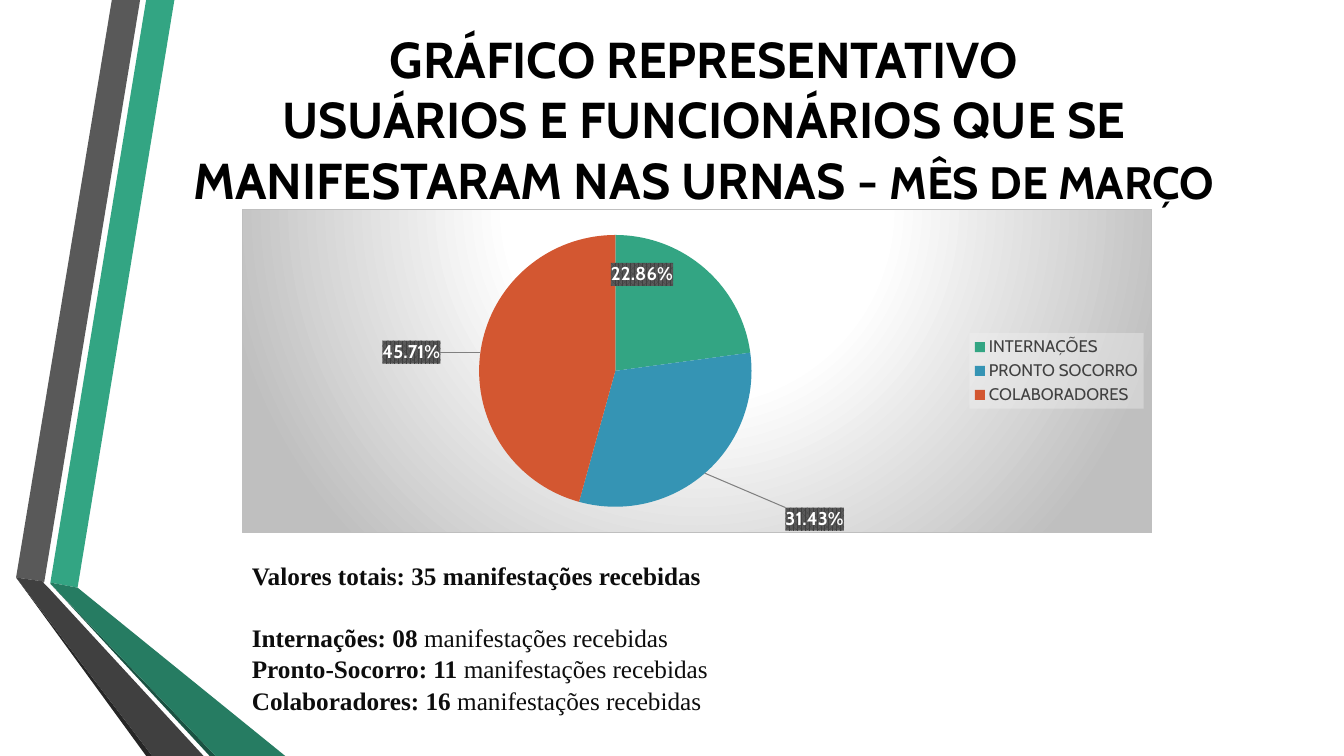
from lxml.etree import fromstring
from pptx import Presentation
from pptx.chart.data import CategoryChartData
from pptx.dml.color import RGBColor
from pptx.enum.chart import XL_CHART_TYPE, XL_LEGEND_POSITION
from pptx.enum.text import MSO_ANCHOR, MSO_AUTO_SIZE, PP_ALIGN
from pptx.oxml.ns import nsdecls, qn
from pptx.util import Inches, Pt

COLORS = {
    "green": "33A583", "green_dark": "267C62", "green_shadow": "1A5242",
    "gray": "595959", "gray_dark": "404040", "gray_shadow": "262626",
    "blue": "3594B4", "orange": "D35731", "silver": "BFBFBF", "leader": "808080",
    "pale": "F2F2F2", "white": "FFFFFF", "black": "000000", "ink": "0D0D0D",
}
RIBBONS = [
    ("green", [(0.5, 5.78), (0.77, 5.83), (1.73, 0), (1.45, 0)]),
    ("gray", [(1.39, 0), (1.11, 0), (0.16, 5.73), (0.44, 5.77)]),
    ("gray_shadow", [(0.16, 5.73), (1.45, 7.5), (1.51, 7.5)]),
    ("green_shadow", [(0.5, 5.79), (2.08, 7.5), (2.14, 7.5)]),
    ("green_dark", [(0.5, 5.79), (2.14, 7.5), (2.83, 7.5), (0.77, 5.83), (0.5, 5.78)]),
    ("gray_dark", [(2.02, 7.5), (0.48, 5.83), (0.43, 5.78), (0.44, 5.77),
                   (0.16, 5.73), (1.51, 7.5)]),
]
SHARES = [
    ("INTERNAÇÕES", 22.86, "green", (-0.02, -0.14)),
    ("PRONTO SOCORRO", 31.43, "blue", (0.17, 0.3)),
    ("COLABORADORES", 45.71, "orange", (-0.15, -0.03)),
]
TOTALS = [
    ("Valores totais: 35 manifestações recebidas", ""),
    ("Internações: 08 ", "manifestações recebidas"),
    ("Pronto-Socorro: 11 ", "manifestações recebidas"),
    ("Colaboradores: 16 ", "manifestações recebidas"),
]


def rgb(name):
    return RGBColor.from_string(COLORS[name])


def style_font(font, family, size, color, bold=False):
    font.name, font.size, font.bold = family, Pt(size), bold
    font.color.rgb = rgb(color)


def write(paragraph, text, **style):
    run = paragraph.add_run()
    run.text = text
    style_font(run.font, **style)


def xml(tag, content):
    return fromstring(f'<{tag} {nsdecls("c", "a")}>{content}</{tag}>')


def solid(name, extra=""):
    return f'<a:solidFill><a:srgbClr val="{COLORS[name]}">{extra}</a:srgbClr></a:solidFill>'


def manual_layout(target="", **values):
    items = "".join(f'<c:{key} val="{value}"/>' for key, value in values.items())
    return f"<c:manualLayout>{target}{items}</c:manualLayout>"


def label_xml():
    look = (
        '<c:numFmt formatCode="0.00%" sourceLinked="0"/>'
        '<c:spPr><a:pattFill prst="pct75">'
        f'<a:fgClr><a:srgbClr val="{COLORS["gray_dark"]}"/></a:fgClr>'
        f'<a:bgClr><a:srgbClr val="{COLORS["gray"]}"/></a:bgClr>'
        '</a:pattFill><a:ln><a:noFill/></a:ln></c:spPr>'
        '<c:txPr><a:bodyPr/><a:p><a:pPr><a:defRPr sz="1330" b="1">'
        f'{solid("white")}<a:latin typeface="Cabin"/></a:defRPr></a:pPr></a:p></c:txPr>'
        '<c:dLblPos val="ctr"/><c:showLegendKey val="0"/><c:showVal val="0"/>'
        '<c:showCatName val="0"/><c:showSerName val="0"/><c:showPercent val="1"/>'
        '<c:showBubbleSize val="0"/>'
    )
    points = "".join(
        f'<c:dLbl><c:idx val="{index}"/><c:layout>{manual_layout(x=x, y=y)}</c:layout>'
        f"{look}</c:dLbl>"
        for index, (_, _, _, (x, y)) in enumerate(SHARES)
    )
    leader = (f'<c:showLeaderLines val="1"/><c:leaderLines><c:spPr><a:ln w="9525">'
              f'{solid("leader")}</a:ln></c:spPr></c:leaderLines>')
    return xml("c:dLbls", points + look + leader)


class SlideBuilder:
    def __init__(self, presentation):
        self.slide = presentation.slides.add_slide(presentation.slide_layouts[5])
        self.shapes = self.slide.shapes
        self.heading = {"family": "Cabin", "color": "black", "bold": True}
        self.body = {"family": "Times New Roman", "size": 18, "color": "ink"}

    def background(self, color):
        self.slide.background.fill.solid()
        self.slide.background.fill.fore_color.rgb = rgb(color)

    def ribbon(self, color, points):
        corners = [(Inches(x), Inches(y)) for x, y in points]
        builder = self.shapes.build_freeform(*corners[0])
        builder.add_line_segments(corners[1:], close=True)
        shape = builder.convert_to_shape()
        shape.shadow.inherit = False
        shape.fill.solid()
        shape.fill.fore_color.rgb = rgb(color)
        shape.line.fill.background()

    def title(self, lines, ending, box):
        title = self.shapes.title
        title.left, title.top, title.width, title.height = map(Inches, box)
        frame = title.text_frame
        frame.word_wrap, frame.auto_size = True, MSO_AUTO_SIZE.NONE
        frame.vertical_anchor = MSO_ANCHOR.MIDDLE
        paragraph = frame.paragraphs[0]
        paragraph.alignment = PP_ALIGN.CENTER
        write(paragraph, lines[0], size=36, **self.heading)
        paragraph.add_line_break()
        write(paragraph, lines[1], size=36, **self.heading)
        write(paragraph, ending, size=32.4, **self.heading)

    def pie(self, shares, box):
        data = CategoryChartData()
        data.categories = [share[0] for share in shares]
        data.add_series("Series 1", [share[1] for share in shares])
        chart = self.shapes.add_chart(XL_CHART_TYPE.PIE, *map(Inches, box), data).chart
        chart.has_title = False
        style_font(chart.font, "Cabin", 10, "black")
        plot = chart.plots[0]
        plot.vary_by_categories = True
        for index, (_, _, color, _) in enumerate(shares):
            point = plot.series[0].points[index]
            point.format.fill.solid()
            point.format.fill.fore_color.rgb = rgb(color)
            point.format.line.fill.background()
        chart.has_legend = True
        chart.legend.position = XL_LEGEND_POSITION.RIGHT
        chart.legend.include_in_layout = False
        style_font(chart.legend.font, "Cabin", 12, "gray_dark")
        self.finish_pie(chart.element)

    def finish_pie(self, root):
        next(root.iter(qn("c:cat"))).addprevious(label_xml())
        legend = next(root.iter(qn("c:legend")))
        legend.find(qn("c:txPr")).addprevious(
            xml("c:spPr", solid("pale", '<a:alpha val="39000"/>')))
        area = next(root.iter(qn("c:plotArea")))
        for layout in area.findall(qn("c:layout")):
            area.remove(layout)
        area.insert(0, xml("c:layout", manual_layout(
            '<c:layoutTarget val="inner"/>', xMode="edge", yMode="edge",
            x=0.26, y=0.08, w=0.3, h=0.84)))
        stops = "".join(
            f'<a:gs pos="{position}000"><a:srgbClr val="{COLORS[color]}"/></a:gs>'
            for position, color in [(0, "white"), (39, "white"), (100, "silver")])
        root.find(qn("c:chart")).addnext(xml("c:spPr", (
            f'<a:gradFill><a:gsLst>{stops}</a:gsLst><a:path path="circle">'
            '<a:fillToRect l="50000" t="-80000" r="50000" b="180000"/></a:path></a:gradFill>'
            f'<a:ln w="9525">{solid("silver")}</a:ln>')))

    def totals(self, rows, box):
        frame = self.shapes.add_textbox(*map(Inches, box)).text_frame
        frame.word_wrap = True
        for index, (label, detail) in enumerate(rows):
            paragraph = frame.add_paragraph() if index else frame.paragraphs[0]
            paragraph.alignment = PP_ALIGN.JUSTIFY
            paragraph.line_spacing = 1.04
            paragraph.space_before = Pt(21.6 if index == 1 else 0)
            write(paragraph, label, bold=True, **self.body)
            if detail:
                write(paragraph, detail, **self.body)


def main():
    presentation = Presentation()
    presentation.slide_width, presentation.slide_height = Inches(13.33), Inches(7.5)
    builder = SlideBuilder(presentation)
    builder.background("white")
    for color, points in RIBBONS:
        builder.ribbon(color, points)
    builder.title(
        ["GRÁFICO REPRESENTATIVO",
         "USUÁRIOS E FUNCIONÁRIOS QUE SE MANIFESTARAM NAS URNAS - "],
        "MÊS DE MARÇO", (1.22, 0.28, 11.52, 1.79))
    builder.pie(SHARES, (2.4, 2.07, 9.03, 3.22))
    builder.totals(TOTALS, (2.4, 5.5, 9.03, 1.62))
    presentation.save("out.pptx")


if __name__ == "__main__":
    main()
